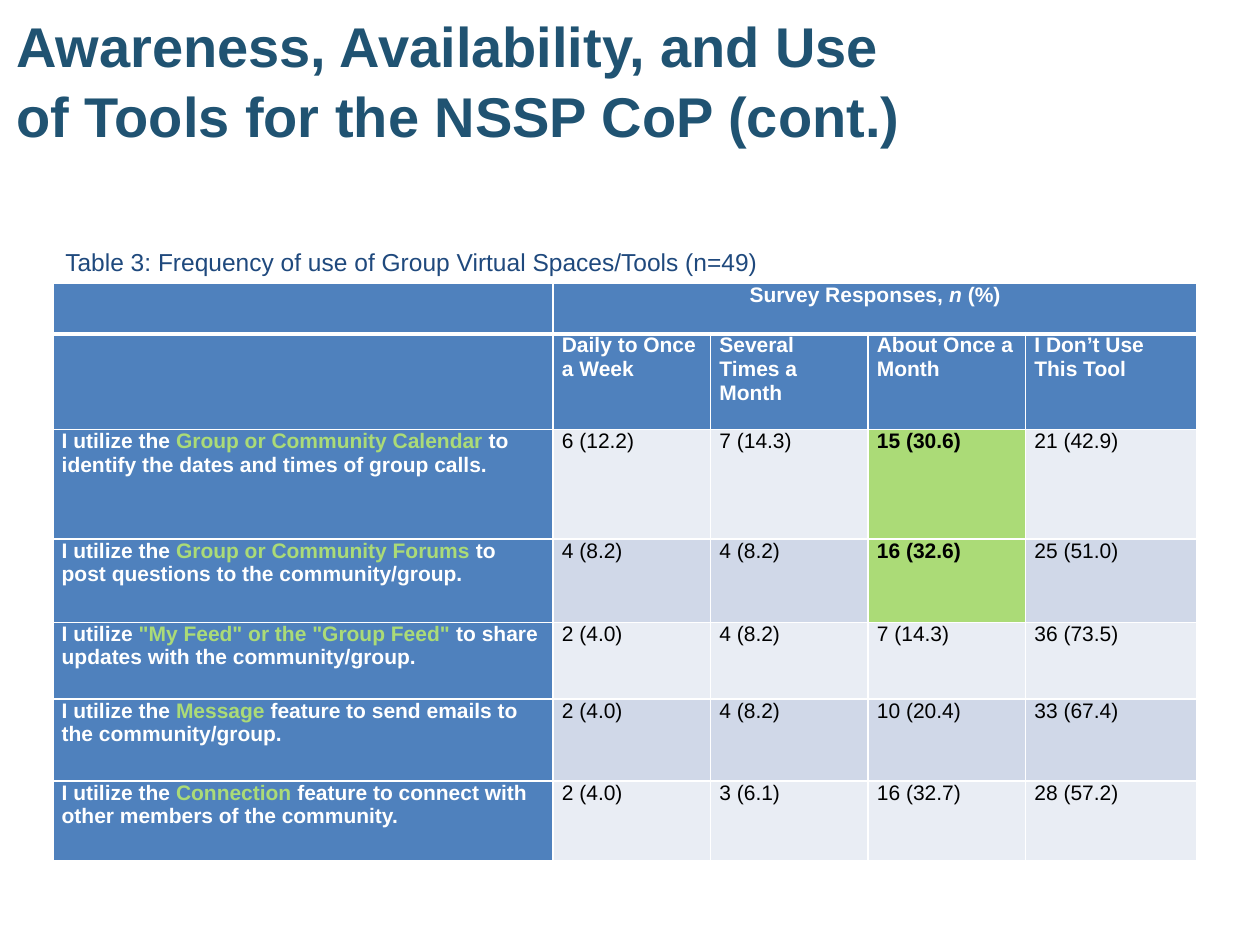
from pptx import Presentation
from pptx.dml.color import RGBColor
from pptx.enum.text import MSO_ANCHOR, PP_ALIGN
from pptx.oxml import parse_xml
from pptx.oxml.ns import nsdecls
from pptx.util import Inches, Pt

MIDDLE, TOP = MSO_ANCHOR.MIDDLE, MSO_ANCHOR.TOP
LEFT, CENTER = PP_ALIGN.LEFT, PP_ALIGN.CENTER

WHITE = RGBColor(0xFF, 0xFF, 0xFF)
BLACK = RGBColor(0x00, 0x00, 0x00)
TEAL = RGBColor(0x20, 0x53, 0x72)
NAVY = RGBColor(0x1F, 0x49, 0x7D)
BLUE = RGBColor(0x4F, 0x81, 0xBD)
GREEN = RGBColor(0xAB, 0xDB, 0x77)
BANDS = (RGBColor(0xE9, 0xED, 0xF4), RGBColor(0xD0, 0xD8, 0xE8))

COLUMN_WIDTHS = (3.97, 1.25, 1.25, 1.25, 1.36)
ROW_HEIGHTS = (0.4, 0.76, 0.87, 0.66, 0.61, 0.65, 0.63)
FREQUENCIES = ("Daily to Once a Week", "Several Times a Month",
               "About Once a Month", "I Don’t Use This Tool")
TOOLS = (
    (("I utilize the ", "Group or Community Calendar ",
      "to identify the dates and times of group calls."),
     ("6 (12.2)", "7 (14.3)", "15 (30.6)", "21 (42.9)")),
    (("I utilize the ", "Group or Community Forums ",
      "to post questions to the community/group."),
     ("4 (8.2)", "4 (8.2)", "16 (32.6)", "25 (51.0)")),
    (("I utilize ", '"My Feed" or the "Group Feed" ',
      "to share updates with the community/group."),
     ("2 (4.0)", "4 (8.2)", "7 (14.3)", "36 (73.5)")),
    (("I utilize the ", "Message",
      " feature to send emails to the community/group."),
     ("2 (4.0)", "4 (8.2)", "10 (20.4)", "33 (67.4)")),
    (("I utilize the ", "Connection",
      " feature to connect with other members of the community."),
     ("2 (4.0)", "3 (6.1)", "16 (32.7)", "28 (57.2)")),
)
HIGHLIGHTS = ("15 (30.6)", "16 (32.6)")


class SlideBuilder:
    """Hold the text style and the current slide, and add elements to it."""

    def __init__(self, page, font="Arial", cell_size=12):
        self.page = page
        self.font = font
        self.cell_size = cell_size

    def span(self, para, text, size, color, bold=False, italic=False):
        span = para.add_run()
        span.text = text
        font = span.font
        font.name, font.size = self.font, Pt(size)
        font.bold, font.italic = bold, italic
        font.color.rgb = color

    def text(self, text, place, size, color, bold=False, anchor=TOP):
        box = self.page.shapes.add_textbox(*map(Inches, place))
        frame = box.text_frame
        frame.word_wrap = True
        frame.vertical_anchor = anchor
        self.span(frame.paragraphs[0], text, size, color, bold)
        return frame.paragraphs[0]

    def table(self, left, top, widths, heights):
        table = self.page.shapes.add_table(
            len(heights), len(widths), Inches(left), Inches(top),
            Inches(sum(widths)), Inches(sum(heights))).table
        for column, width in zip(table.columns, widths):
            column.width = Inches(width)
        for row, height in zip(table.rows, heights):
            row.height = Inches(height)
        return table

    def borders(self, cell, top=1, bottom=1):
        properties = cell._tc.get_or_add_tcPr()
        for side, width in (("L", 1), ("R", 1), ("T", top), ("B", bottom)):
            properties.append(parse_xml(
                f'<a:ln{side} {nsdecls("a")} w="{Pt(width)}"><a:solidFill>'
                f'<a:srgbClr val="{WHITE}"/></a:solidFill></a:ln{side}>'))

    def cell(self, cell, fill, spans=(), align=LEFT):
        cell.fill.solid()
        cell.fill.fore_color.rgb = fill
        cell.margin_left = cell.margin_right = Inches(0.07)
        cell.margin_top = cell.margin_bottom = 0
        para = cell.text_frame.paragraphs[0]
        para.alignment = align
        for text, color, bold, italic in spans:
            self.span(para, text, self.cell_size, color, bold, italic)


def add_survey_table(builder):
    table = builder.table(0.42, 2.25, COLUMN_WIDTHS, ROW_HEIGHTS)
    for index, row in enumerate(table.rows):
        for cell in row.cells:
            builder.borders(cell, top=3 if index == 1 else 1,
                            bottom=3 if index == 0 else 1)

    table.cell(0, 1).merge(table.cell(0, 4))
    builder.cell(table.cell(0, 0), BLUE)
    builder.cell(table.cell(0, 1), BLUE, (
        ("Survey Responses, ", WHITE, True, False),
        ("n", WHITE, True, True),
        (" (%)", WHITE, True, False)), CENTER)
    builder.cell(table.cell(1, 0), BLUE)
    for column, label in enumerate(FREQUENCIES, 1):
        builder.cell(table.cell(1, column), BLUE, [(label, WHITE, True, False)])

    for index, (statement, counts) in enumerate(TOOLS):
        row = index + 2
        spans = [(text, color, True, False)
                 for text, color in zip(statement, (WHITE, GREEN, WHITE))]
        builder.cell(table.cell(row, 0), BLUE, spans)
        for column, count in enumerate(counts, 1):
            marked = count in HIGHLIGHTS
            fill = GREEN if marked else BANDS[index % 2]
            builder.cell(table.cell(row, column), fill,
                         [(count, BLACK, marked, False)])


def main():
    deck = Presentation()
    deck.slide_width, deck.slide_height = Inches(10), Inches(7.5)
    builder = SlideBuilder(deck.slides.add_slide(deck.slide_layouts[6]))
    title = builder.text(
        "Awareness, Availability, and Use of Tools for the NSSP CoP (cont.)",
        (0.03, 0, 7.28, 1.25), 32, TEAL, True, MIDDLE)
    title.line_spacing = 1.04
    add_survey_table(builder)
    builder.text("Table 3: Frequency of use of Group Virtual Spaces/Tools (n=49)",
                 (0.42, 1.91, 7.86, 0.34), 14, NAVY)
    deck.save("out.pptx")


if __name__ == "__main__":
    main()
